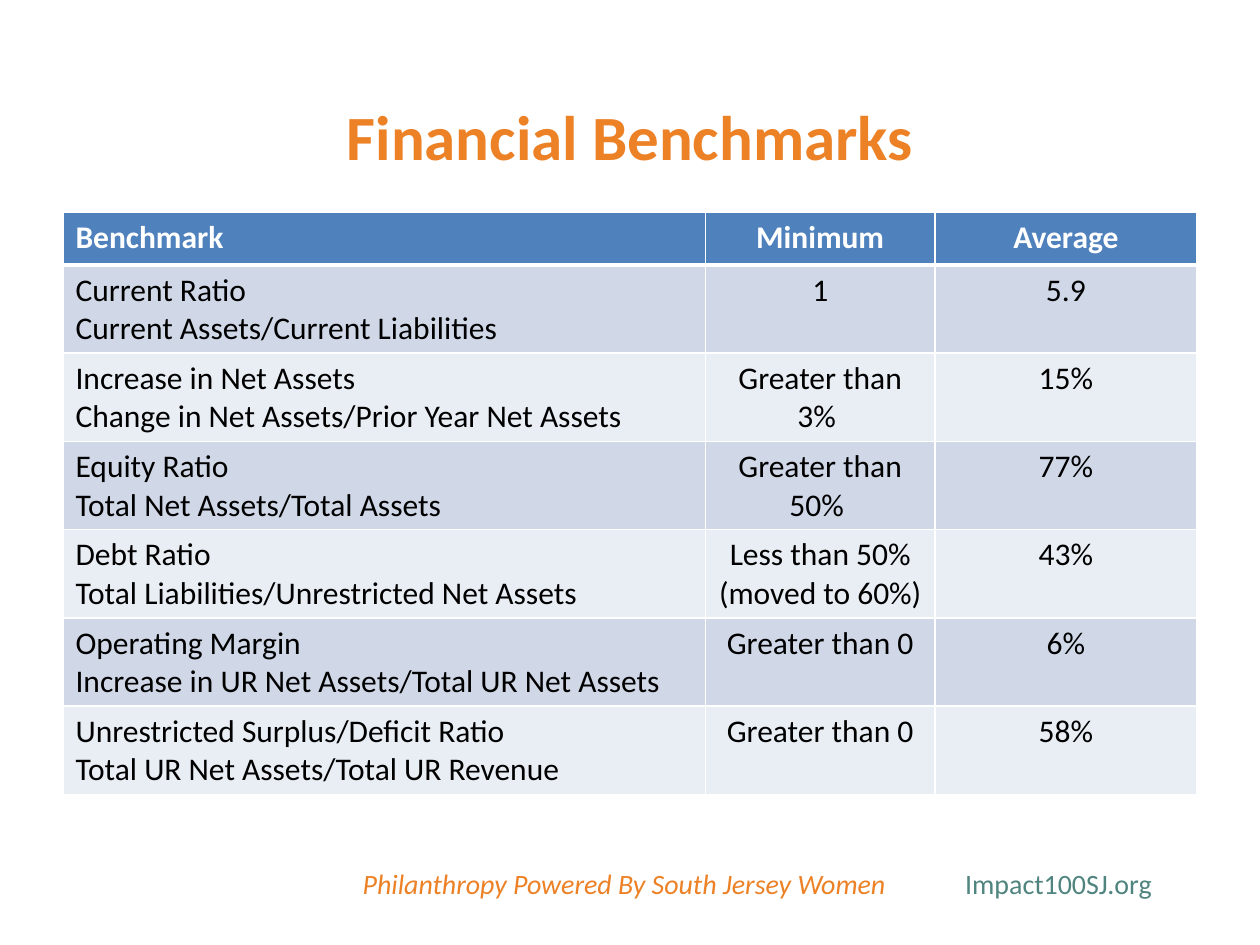
from lxml.etree import SubElement
from pptx import Presentation
from pptx.dml.color import RGBColor
from pptx.enum.text import MSO_ANCHOR, PP_ALIGN
from pptx.oxml.ns import qn
from pptx.util import Inches, Pt

COLORS = {
    "orange": "EC8126", "teal": "4F847F", "header": "4F81BD",
    "odd": "D0D8E8", "even": "E9EDF4", "white": "FFFFFF", "black": "000000",
}

HEADINGS = ["Benchmark", "Minimum", "Average"]
BENCHMARKS = [
    ["Current Ratio\nCurrent Assets/Current Liabilities", "1", "5.9"],
    ["Increase in Net Assets\nChange in Net Assets/Prior Year Net Assets",
     "Greater than 3% ", "15%"],
    ["Equity Ratio\nTotal Net Assets/Total Assets", "Greater than 50% ", "77%"],
    ["Debt Ratio\nTotal Liabilities/Unrestricted Net Assets",
     "Less than 50%\n(moved to 60%)", "43%"],
    ["Operating Margin\nIncrease in UR Net Assets/Total UR Net Assets",
     "Greater than 0", "6%"],
    ["Unrestricted Surplus/Deficit Ratio\nTotal UR Net Assets/Total UR Revenue",
     "Greater than 0", "58%"],
]


class SlideBuilder:
    font_name = "Calibri"

    def __init__(self, deck):
        self.deck = deck
        self.slide = deck.slides.add_slide(deck.slide_layouts[5])

    def area(self, left, top, width, height):
        """Turn shares of the slide's size into lengths."""
        across, down = self.deck.slide_width, self.deck.slide_height
        return (int(left * across), int(top * down),
                int(width * across), int(height * down))

    def fill_text(self, frame, text, color, align=PP_ALIGN.LEFT, **style):
        frame.text = text
        frame.word_wrap = True
        for para in frame.paragraphs:
            para.alignment = align
            for span in para.runs:
                span.font.color.rgb = RGBColor.from_string(COLORS[color])
                for name, value in {"name": self.font_name, **style}.items():
                    setattr(span.font, name, value)

    def title(self, text, shares, **style):
        box = self.slide.shapes.title
        for name, value in zip(("left", "top", "width", "height"), self.area(*shares)):
            setattr(box, name, value)
        self.fill_text(box.text_frame, text, **style)
        box.text_frame.vertical_anchor = MSO_ANCHOR.MIDDLE

    def text(self, text, shares, **style):
        box = self.slide.shapes.add_textbox(*self.area(*shares))
        self.fill_text(box.text_frame, text, **style)

    def borders(self, cell, **points):
        properties = cell._tc.get_or_add_tcPr()
        for position, (side, width) in enumerate(points.items()):
            line = properties.makeelement(qn(f"a:{side}"), {"w": str(int(Pt(width)))})
            fill = SubElement(line, qn("a:solidFill"))
            SubElement(fill, qn("a:srgbClr"), val=COLORS["white"])
            properties.insert(position, line)

    def table(self, rows, shares, column_shares, row_shares):
        left, top, width, height = self.area(*shares)
        table = self.slide.shapes.add_table(
            len(rows), len(rows[0]), left, top, width, height).table
        for column, share in zip(table.columns, column_shares):
            column.width = int(width * share)
        for row, share in zip(table.rows, row_shares):
            row.height = int(height * share)
        for r, values in enumerate(rows):
            header = r == 0
            band = "header" if header else "odd" if r % 2 else "even"
            for c, value in enumerate(values):
                cell = table.cell(r, c)
                cell.fill.solid()
                cell.fill.fore_color.rgb = RGBColor.from_string(COLORS[band])
                self.fill_text(cell.text_frame, value,
                               color="white" if header else "black",
                               align=PP_ALIGN.CENTER if c else PP_ALIGN.LEFT,
                               size=Pt(18), bold=header)
                self.borders(cell, lnL=1, lnR=1, lnT=3 if r == 1 else 1,
                             lnB=3 if header else 1)


def main():
    deck = Presentation()
    deck.slide_width, deck.slide_height = Inches(10), Inches(7.5)
    page = SlideBuilder(deck)

    # Footer
    page.text("Philanthropy Powered By South Jersey Women", (0.278, 0.91, 0.454, 0.05),
              color="orange", size=Pt(16), italic=True)
    page.text("Impact100SJ.org", (0.697, 0.91, 0.227, 0.05),
              color="teal", align=PP_ALIGN.RIGHT, size=Pt(16))

    # Benchmarks: one-line header, then equal two-line rows
    header_share = 0.09
    row_share = (1 - header_share) / len(BENCHMARKS)
    page.table([HEADINGS, *BENCHMARKS], (0.05, 0.225, 0.9, 0.615),
               column_shares=(5.1 / 9, 1.82 / 9, 2.08 / 9),
               row_shares=[header_share] + [row_share] * len(BENCHMARKS))

    # Title
    page.title("Financial Benchmarks", (0.05, 0.06, 0.9, 1 / 6),
               color="orange", align=PP_ALIGN.CENTER, size=Pt(36), bold=True)

    deck.save("out.pptx")


if __name__ == "__main__":
    main()
